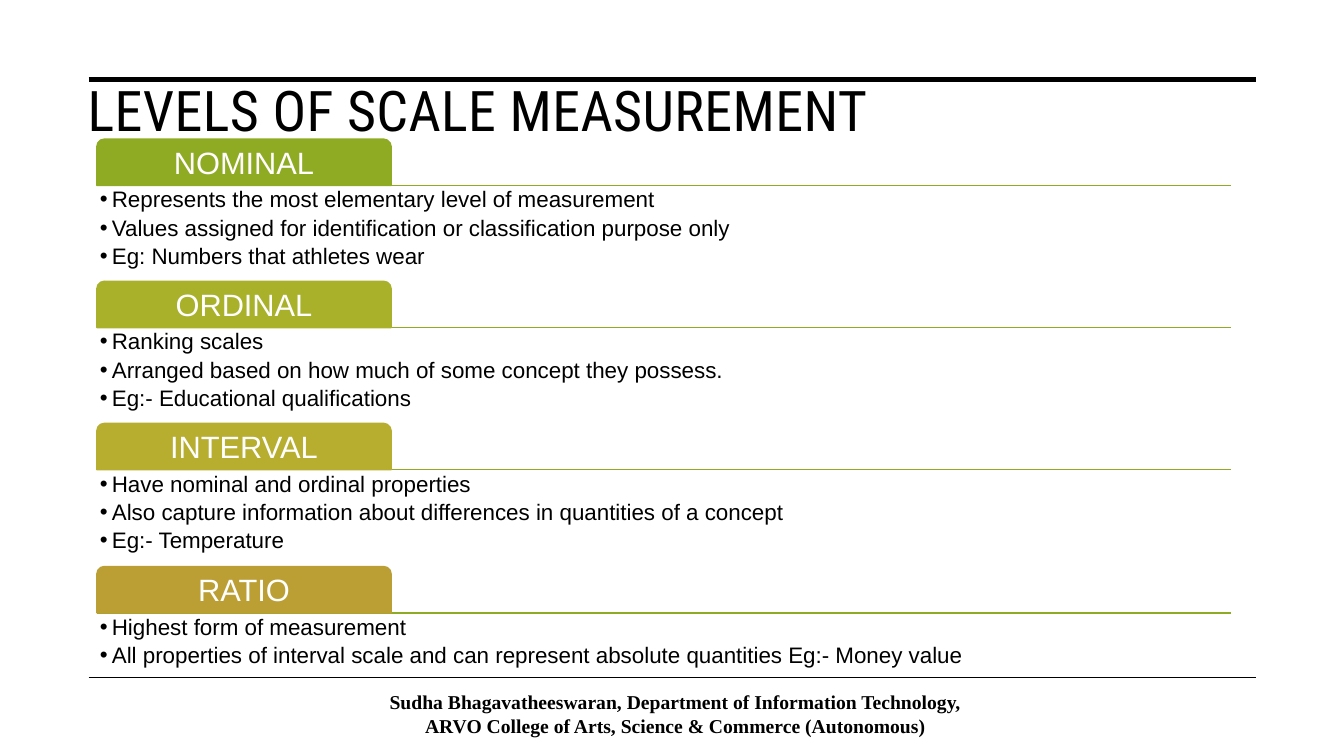
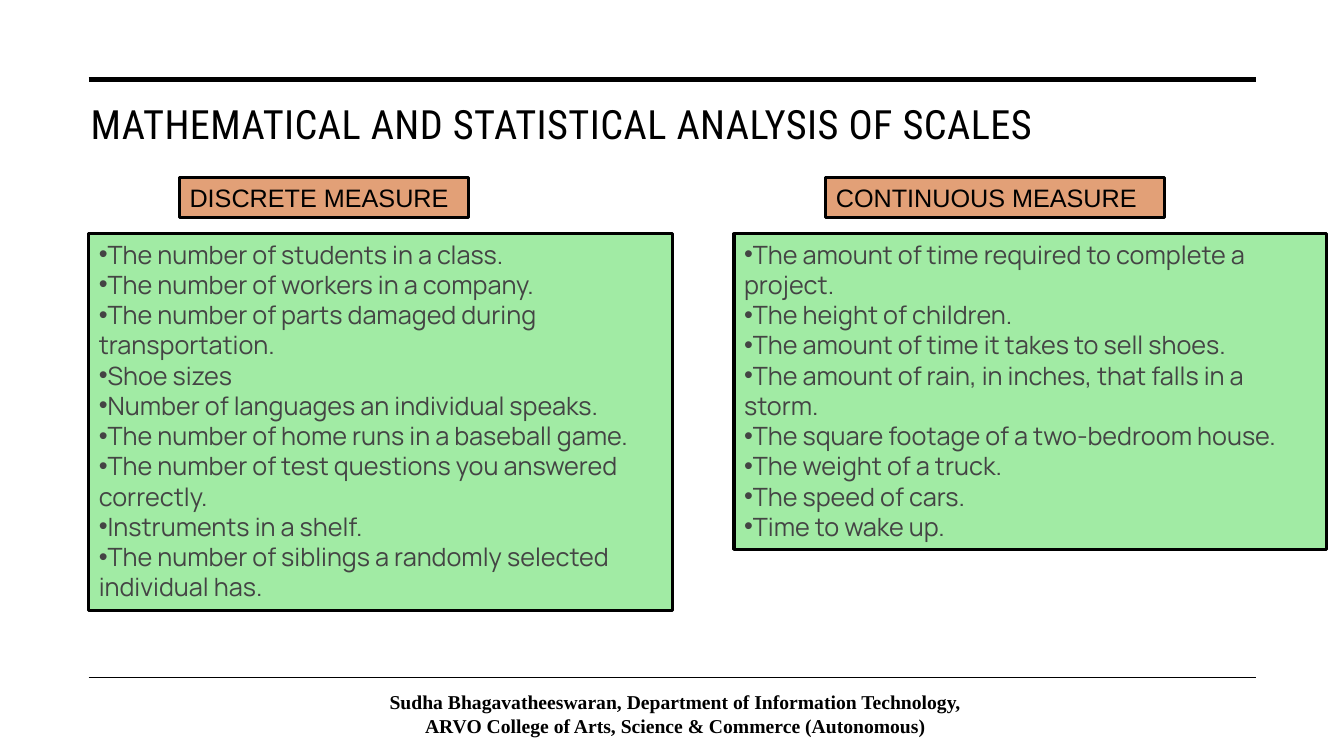
from lxml.etree import SubElement
from pptx import Presentation
from pptx.dml.color import RGBColor
from pptx.enum.shapes import MSO_CONNECTOR, MSO_SHAPE
from pptx.enum.text import MSO_ANCHOR, MSO_AUTO_SIZE, PP_ALIGN
from pptx.oxml.ns import qn
from pptx.util import Pt

SCALE = 9144
BLACK, WHITE, GRAY = "000000", "FFFFFF", "444444"
GREEN, MINT, PEACH = "8FAB24", "A1EBA4", "E2A077"
LEFT, RIGHT = 88, 1246
FOOTER = [
    "Sudha Bhagavatheeswaran, Department of Information Technology,",
    "ARVO College of Arts, Science & Commerce (Autonomous)",
]
LEVELS = [
    ("NOMINAL", GREEN, [
        "Represents the most elementary level of measurement",
        "Values assigned for identification or classification purpose only",
        "Eg: Numbers that athletes wear",
    ]),
    ("ORDINAL", "A8B129", [
        "Ranking scales",
        "Arranged based on how much of some concept they possess.",
        "Eg:- Educational qualifications",
    ]),
    ("INTERVAL", "B7AD2E", [
        "Have nominal and ordinal properties",
        "Also capture information about differences in quantities of a concept",
        "Eg:- Temperature",
    ]),
    ("RATIO", "BC9F34", [
        "Highest form of measurement",
        "All properties of interval scale and can represent absolute "
        "quantities Eg:- Money value",
    ]),
]
DISCRETE = [
    "The number of students in a class.",
    "The number of workers in a company.",
    "The number of parts damaged during transportation.",
    "Shoe sizes",
    "Number of languages an individual speaks.",
    "The number of home runs in a baseball game.",
    "The number of test questions you answered correctly.",
    "Instruments in a shelf.",
    "The number of siblings a randomly selected individual has.",
]
CONTINUOUS = [
    "The amount of time required to complete a project.",
    "The height of children.",
    "The amount of time it takes to sell shoes.",
    "The amount of rain, in inches, that falls in a storm.",
    "The square footage of a two-bedroom house.",
    "The weight of a truck.",
    "The speed of cars.",
    "Time to wake up.",
]
MEASURES = [
    ("DISCRETE MEASURE", (178, 176, 287, 40), DISCRETE, (88, 232, 579, 374)),
    ("CONTINUOUS MEASURE", (819, 176, 336, 40), CONTINUOUS, (728, 232, 588, 313)),
]


def px(num):
    """Turn px into EMU."""
    return num * SCALE


def color(code):
    """Turn a hex string into a colour."""
    return RGBColor.from_string(code)


def place(shape, box):
    """Move and size a shape."""
    shape.left, shape.top, shape.width, shape.height = map(px, box)


def paint(shape, fill, line, width):
    """Set the fill and outline of a shape."""
    shape.fill.solid()
    shape.fill.fore_color.rgb = color(fill)
    shape.line.color.rgb = color(line)
    shape.line.width = Pt(width)


def rule(slide, start, end, y, code, width):
    """Draw a level line."""
    line = slide.shapes.add_connector(
        MSO_CONNECTOR.STRAIGHT, px(start), px(y), px(end), px(y))
    line.line.color.rgb = color(code)
    line.line.width = Pt(width)
    SubElement(line._element.spPr, qn("a:effectLst"))


def mark(para, hang, bullet):
    """Set the hanging indent and bullet of a paragraph."""
    props = para._p.get_or_add_pPr()
    props.set("marL", str(px(hang)))
    props.set("indent", str(-px(hang)))
    if bullet:
        SubElement(props, qn("a:buFont"), typeface="Arial")
        SubElement(props, qn("a:buChar"), char="•")
    else:
        SubElement(props, qn("a:buNone"))


def write(shape, lines, face, size, code, bold=False, align=PP_ALIGN.LEFT,
          anchor=MSO_ANCHOR.TOP, pads=(10, 5, 10, 5), bullet=False, hang=0,
          space=1.0, after=0):
    """Fill a shape with paragraphs of one style."""
    frame = shape.text_frame
    frame.text = "\n".join(lines)
    frame.word_wrap = True
    frame.auto_size = MSO_AUTO_SIZE.NONE
    frame.vertical_anchor = anchor
    (frame.margin_left, frame.margin_top,
     frame.margin_right, frame.margin_bottom) = map(px, pads)
    for para in frame.paragraphs:
        mark(para, hang, bullet)
        para.alignment = align
        para.line_spacing = space
        para.space_before = Pt(0)
        para.space_after = Pt(after)
        font = para.font
        font.name, font.size, font.bold = face, Pt(size), bold
        font.color.rgb = color(code)


def start(deck, layout, title, box, size):
    """Add a slide with its title, rules and footer."""
    slide = deck.slides.add_slide(deck.slide_layouts.get_by_name(layout))
    head = slide.shapes.title
    place(head, box)
    write(head, [title], "Roboto Condensed", size, BLACK)
    props = head.text_frame.paragraphs[0]._p.pPr
    props.find(qn("a:defRPr")).set("spc", "30")
    rule(slide, LEFT, RIGHT, 79, BLACK, 3.5)
    rule(slide, LEFT, RIGHT, 672, BLACK, 1)
    foot = slide.shapes.add_textbox(*map(px, (-2, 682, 1344, 52)))
    write(foot, FOOTER, "Times New Roman", 14, BLACK, bold=True,
          align=PP_ALIGN.CENTER, anchor=MSO_ANCHOR.MIDDLE)
    return slide


def level(slide, top, name, code, lines):
    """Draw a tab with its line and list."""
    base = top + 46
    rule(slide, 96, 1221, base, GREEN, 1)
    tab = slide.shapes.add_shape(
        MSO_SHAPE.ROUND_2_SAME_RECTANGLE, *map(px, (96, top, 292, 46)))
    tab.shadow.inherit = False
    paint(tab, code, code, 1)
    write(tab, [name], "Arial", 22, WHITE, align=PP_ALIGN.CENTER,
          anchor=MSO_ANCHOR.MIDDLE, pads=(7, 7, 7, 5), space=0.9)
    area = slide.shapes.add_textbox(*map(px, (96, base, 1125, 93)))
    write(area, lines, "Arial", 16, BLACK, pads=(3, 3, 3, 3), bullet=True,
          hang=12, space=0.9, after=3)


def panel(shape, box, fill, lines, face, code, bullet):
    """Turn a placeholder into an outlined panel."""
    place(shape, box)
    paint(shape, fill, BLACK, 2.25)
    write(shape, lines, face, 18, code, bullet=bullet)


def main():
    """Build and save the deck."""
    deck = Presentation()
    deck.slide_width, deck.slide_height = px(1333), px(750)

    slide = start(deck, "Title Only", "LEVELS OF SCALE MEASUREMENT",
                  (77, 70, 1169, 181), 40)
    for num, item in enumerate(LEVELS):
        level(slide, 138 + num * 424 // 3, *item)

    slide = start(deck, "Comparison",
                  "MATHEMATICAL AND STATISTICAL ANALYSIS OF SCALES",
                  (80, 93, 1169, 64), 28.8)
    holders = slide.placeholders
    for num, (name, spot, lines, area) in enumerate(MEASURES):
        panel(holders[2 * num + 1], spot, PEACH, [name], "Arial", BLACK, False)
        panel(holders[2 * num + 2], area, MINT, lines, "Manrope", GRAY, True)

    deck.save("out.pptx")


if __name__ == "__main__":
    main()
